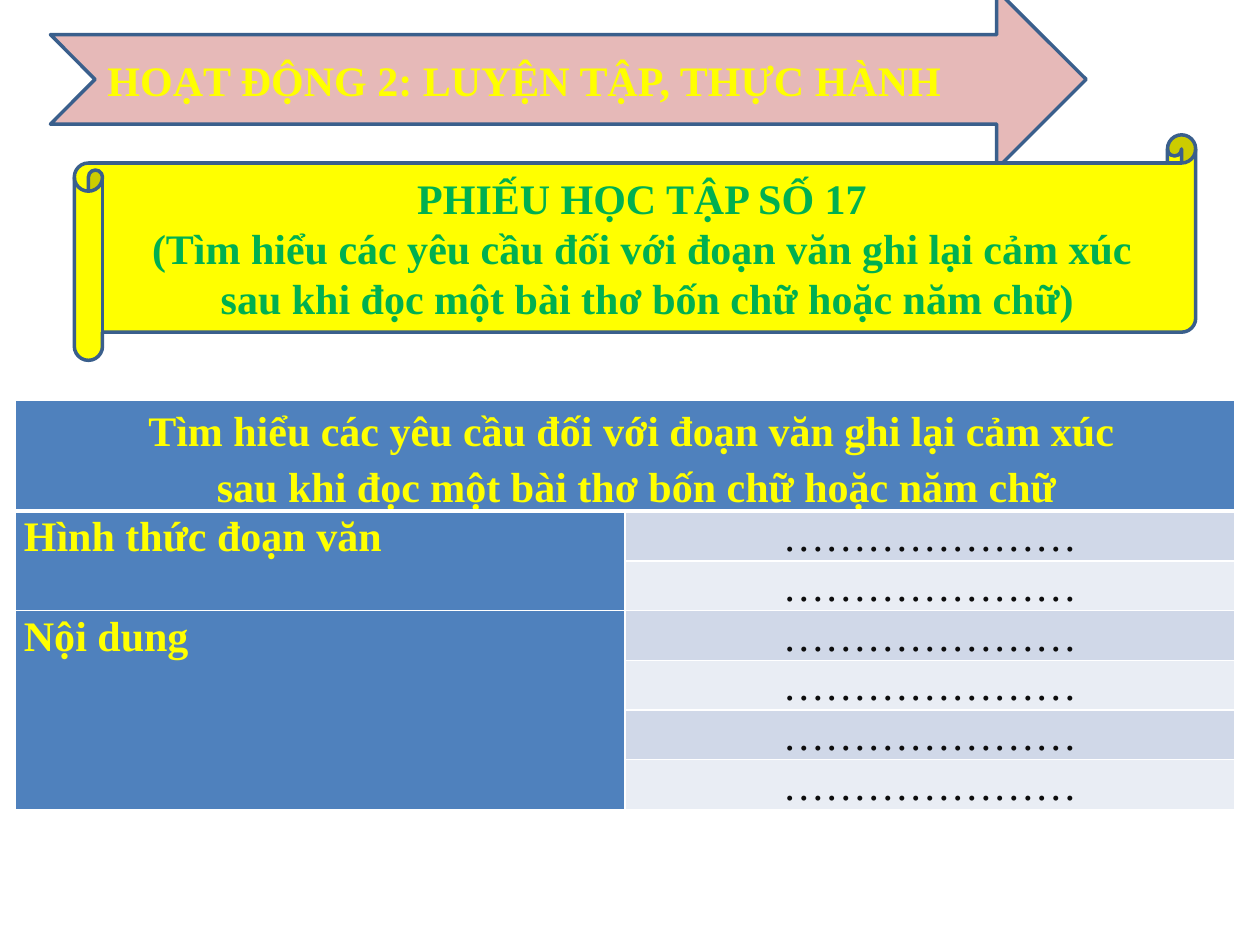
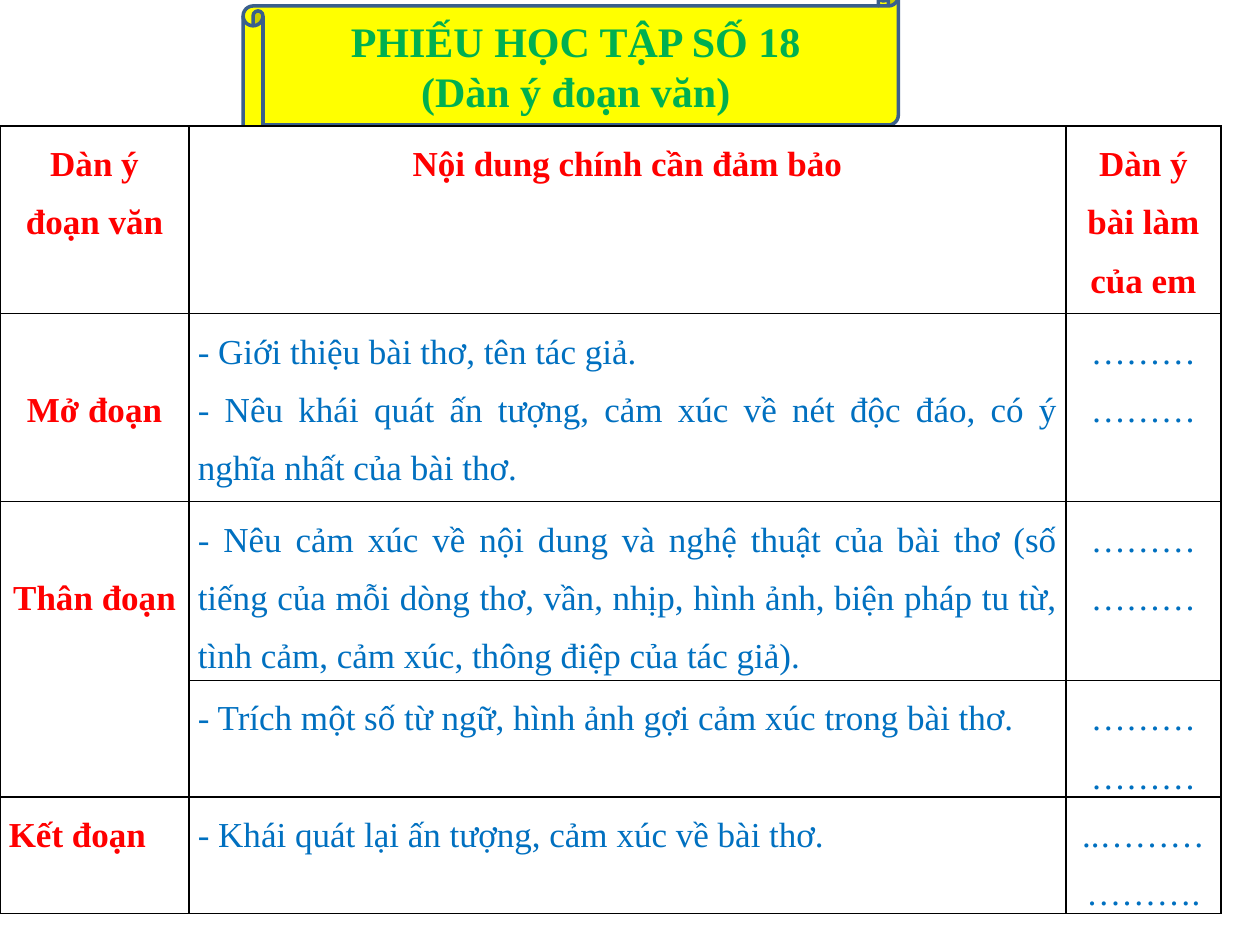
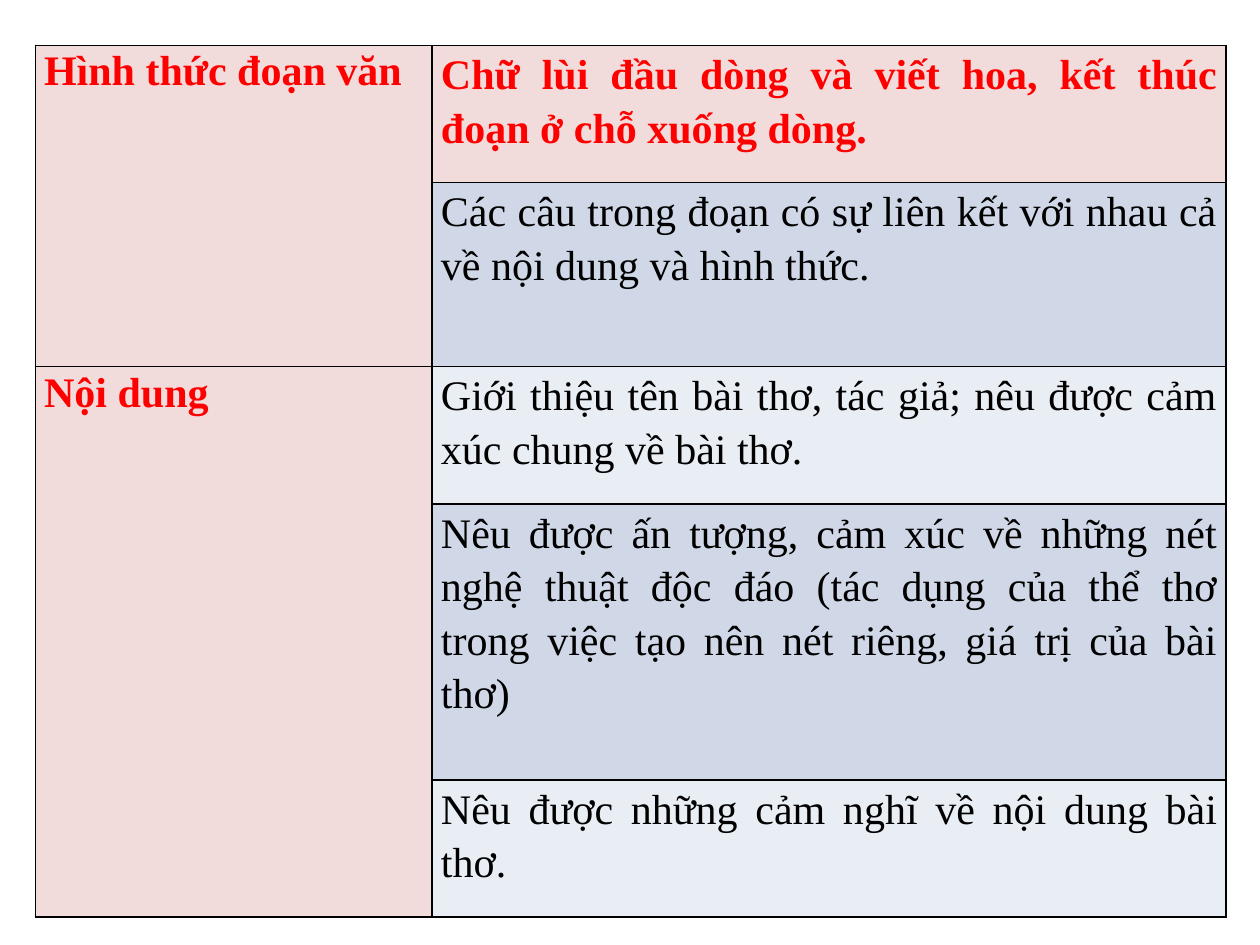
from dataclasses import dataclass, replace

from lxml import etree
from pptx import Presentation
from pptx.dml.color import RGBColor
from pptx.enum.shapes import MSO_SHAPE
from pptx.enum.text import MSO_ANCHOR, PP_ALIGN
from pptx.oxml.ns import qn
from pptx.util import Inches, Pt

FONT = "Times New Roman"
YELLOW = RGBColor(0xFF, 0xFF, 0x00)
GREEN = RGBColor(0x00, 0xB0, 0x50)
RED = RGBColor(0xFF, 0x00, 0x00)
TEXT_BLUE = RGBColor(0x00, 0x70, 0xC0)
BLACK = RGBColor(0x00, 0x00, 0x00)
DOTS_BLACK = RGBColor(0x0D, 0x0D, 0x0D)
WHITE = RGBColor(0xFF, 0xFF, 0xFF)
OUTLINE = RGBColor(0x3A, 0x5F, 0x8C)
ARROW_PINK = RGBColor(0xE6, 0xB9, 0xB8)
PALE_PINK = RGBColor(0xF2, 0xDC, 0xDB)
HEADER_BLUE = RGBColor(0x4F, 0x81, 0xBD)
BANDS = (RGBColor(0xD0, 0xD8, 0xE8), RGBColor(0xE9, 0xED, 0xF4))
CELL_MARGIN = 0.07
OUTLINE_LINE = 0.46


@dataclass(frozen=True)
class TextStyle:
    """Look of the paragraphs in one shape or cell."""
    colour: RGBColor
    size: int = 24
    bold: bool = True
    align: PP_ALIGN = PP_ALIGN.CENTER
    spacing: float = 1.0


def write_lines(text_frame, lines, style):
    """Write one paragraph per line in the given style."""
    text_frame.text = "\n".join(lines)
    for paragraph in text_frame.paragraphs:
        paragraph.alignment = style.align
        paragraph.line_spacing = style.spacing
        paragraph.font.name = FONT
        paragraph.font.size = Pt(style.size)
        paragraph.font.bold = style.bold
        paragraph.font.color.rgb = style.colour


def add_banner(slide, preset, box, fill, lines, style):
    """Add an outlined preset shape holding heading text."""
    shape = slide.shapes.add_shape(preset, *map(Inches, box))
    shape.shadow.inherit = False
    shape.fill.solid()
    shape.fill.fore_color.rgb = fill
    shape.line.color.rgb = OUTLINE
    shape.line.width = Pt(2)
    shape.text_frame.word_wrap = True
    shape.text_frame.vertical_anchor = MSO_ANCHOR.MIDDLE
    write_lines(shape.text_frame, lines, style)


def add_scroll(slide, box, lines):
    """Add a yellow worksheet scroll."""
    add_banner(slide, MSO_SHAPE.HORIZONTAL_SCROLL, box, YELLOW, lines, TextStyle(GREEN))


def set_border(cell, side, colour, width):
    """Draw one side (L, R, T or B) of a cell."""
    properties = cell._tc.get_or_add_tcPr()
    line = etree.SubElement(properties, qn(f"a:ln{side}"), w=str(Pt(width)))
    fill = etree.SubElement(line, qn("a:solidFill"))
    etree.SubElement(fill, qn("a:srgbClr"), val=str(colour))


def add_grid(slide, left, top, widths, heights, line_colour, header_line=1):
    """Add a plain bordered table and return it."""
    frame = slide.shapes.add_table(
        len(heights), len(widths), Inches(left), Inches(top),
        Inches(sum(widths)), Inches(sum(heights)))
    table = frame.table
    table.first_row = table.horz_banding = False
    for column, width in zip(table.columns, widths):
        column.width = Inches(width)
    for index, (row, height) in enumerate(zip(table.rows, heights)):
        row.height = Inches(height)
        for cell in row.cells:
            cell.margin_left = cell.margin_right = Inches(CELL_MARGIN)
            cell.margin_top = cell.margin_bottom = 0
            above = header_line if index == 1 else 1
            below = header_line if index == 0 else 1
            for side, width in (("L", 1), ("R", 1), ("T", above), ("B", below)):
                set_border(cell, side, line_colour, width)
    return table


def fill_cell(cell, lines, fill, style):
    """Colour a cell and write its text."""
    cell.fill.solid()
    cell.fill.fore_color.rgb = fill
    write_lines(cell.text_frame, lines, style)


def build_requirements_slide(slide):
    """Build the worksheet on requirements of the paragraph."""
    add_banner(slide, MSO_SHAPE.NOTCHED_RIGHT_ARROW, (0.4, -0.08, 8.22, 1.42), ARROW_PINK,
               ["HOẠT ĐỘNG 2: LUYỆN TẬP, THỰC HÀNH"], TextStyle(YELLOW, align=PP_ALIGN.LEFT))
    add_scroll(slide, (0.59, 1.07, 8.9, 1.79), [
        "PHIẾU HỌC TẬP SỐ 17",
        "(Tìm hiểu các yêu cầu đối với đoạn văn ghi lại cảm xúc",
        " sau khi đọc một bài thơ bốn chữ hoặc năm chữ)"])

    table = add_grid(slide, 0.12, 3.18, [4.84] * 2, [0.87] + [0.39] * 6, WHITE, header_line=3)
    header = table.cell(0, 0)
    header.merge(table.cell(0, 1))
    header.margin_left = Inches(CELL_MARGIN + 0.1)
    fill_cell(header, [
        "Tìm hiểu các yêu cầu đối với đoạn văn ghi lại cảm xúc",
        " sau khi đọc một bài thơ bốn chữ hoặc năm chữ"],
        HEADER_BLUE, TextStyle(YELLOW, spacing=1.19))
    label_style = TextStyle(YELLOW, align=PP_ALIGN.JUSTIFY, spacing=1.07)
    for first, last, label in ((1, 2, "Hình thức đoạn văn"), (3, 6, "Nội dung")):
        table.cell(first, 0).merge(table.cell(last, 0))
        fill_cell(table.cell(first, 0), [label], HEADER_BLUE, label_style)
    dots_style = TextStyle(DOTS_BLACK, bold=False, spacing=1.07)
    for row in range(1, 7):
        fill_cell(table.cell(row, 1), ["…………………"], BANDS[(row - 1) % 2], dots_style)


def build_outline_slide(slide):
    """Build the worksheet with the outline of the paragraph."""
    add_scroll(slide, (1.93, -0.11, 5.2, 1.26), ["PHIẾU HỌC TẬP SỐ 18", "(Dàn ý đoạn văn)"])
    table = add_grid(slide, 0, 1, [1.5, 6.96, 1.23], [1.49, 1.49, 1.42, 0.92, 0.92], BLACK)
    label_style = TextStyle(RED, size=20, spacing=1.5)
    dots_style = replace(label_style, colour=TEXT_BLUE, bold=False)
    content_style = replace(dots_style, align=PP_ALIGN.JUSTIFY)

    headers = ("Dàn ý đoạn văn", "Nội dung chính cần đảm bảo", "Dàn ý bài làm của em")
    for column, header in enumerate(headers):
        fill_cell(table.cell(0, column), [header], WHITE, label_style)

    table.cell(2, 0).merge(table.cell(3, 0))
    labels = ((1, "Mở đoạn", PP_ALIGN.CENTER, OUTLINE_LINE),
              (2, "Thân đoạn", PP_ALIGN.CENTER, OUTLINE_LINE),
              (4, "Kết đoạn", PP_ALIGN.LEFT, 0))
    for row, label, align, top in labels:
        table.cell(row, 0).margin_top = Inches(top)
        fill_cell(table.cell(row, 0), [label], WHITE, replace(label_style, align=align))

    contents = (
        (["- Giới thiệu bài thơ, tên tác giả.",
          "- Nêu khái quát ấn tượng, cảm xúc về nét độc đáo, có ý nghĩa nhất của bài thơ."],
         "………………"),
        (["- Nêu cảm xúc về nội dung và nghệ thuật của bài thơ (số tiếng của mỗi dòng thơ, "
          "vần, nhịp, hình ảnh, biện pháp tu từ, tình cảm, cảm xúc, thông điệp của tác giả)."],
         "………………"),
        (["- Trích một số từ ngữ, hình ảnh gợi cảm xúc trong bài thơ."], "………………"),
        (["- Khái quát lại ấn tượng, cảm xúc về bài thơ."], "..………………."),
    )
    for row, (lines, dots) in enumerate(contents, start=1):
        fill_cell(table.cell(row, 1), lines, WHITE, content_style)
        fill_cell(table.cell(row, 2), [dots], WHITE, dots_style)


def build_answers_slide(slide):
    """Build the table that answers the first worksheet."""
    table = add_grid(slide, 0.28, 0.36, [3.15, 6.3], [1.09, 1.46, 1.09, 2.19, 1.09], BLACK)
    label_style = TextStyle(RED, align=PP_ALIGN.JUSTIFY, spacing=1.07)
    for first, last, label in ((0, 1, "Hình thức đoạn văn"), (2, 4, "Nội dung")):
        table.cell(first, 0).merge(table.cell(last, 0))
        fill_cell(table.cell(first, 0), [label], PALE_PINK, label_style)

    key_style = replace(label_style, spacing=1.15)
    fill_cell(table.cell(0, 1), ["Chữ lùi đầu dòng và viết hoa, kết thúc đoạn ở chỗ xuống dòng."],
              PALE_PINK, key_style)
    answers = (
        "Các câu trong đoạn có sự liên kết với nhau cả về nội dung và hình thức.",
        "Giới thiệu tên bài thơ, tác giả; nêu được cảm xúc chung về bài thơ.",
        "Nêu được ấn tượng, cảm xúc về những nét nghệ thuật độc đáo (tác dụng của thể thơ "
        "trong việc tạo nên nét riêng, giá trị của bài thơ)",
        "Nêu được những cảm nghĩ về nội dung bài thơ.",
    )
    answer_style = replace(key_style, colour=BLACK, bold=False)
    for row, answer in enumerate(answers, start=1):
        fill_cell(table.cell(row, 1), [answer], BANDS[(row - 1) % 2], answer_style)


def main():
    """Build the three slides and save them."""
    presentation = Presentation()
    presentation.slide_width = Inches(10)
    presentation.slide_height = Inches(7.5)
    blank_layout = presentation.slide_layouts[6]
    for build in (build_requirements_slide, build_outline_slide, build_answers_slide):
        build(presentation.slides.add_slide(blank_layout))
    presentation.save("out.pptx")


if __name__ == "__main__":
    main()
